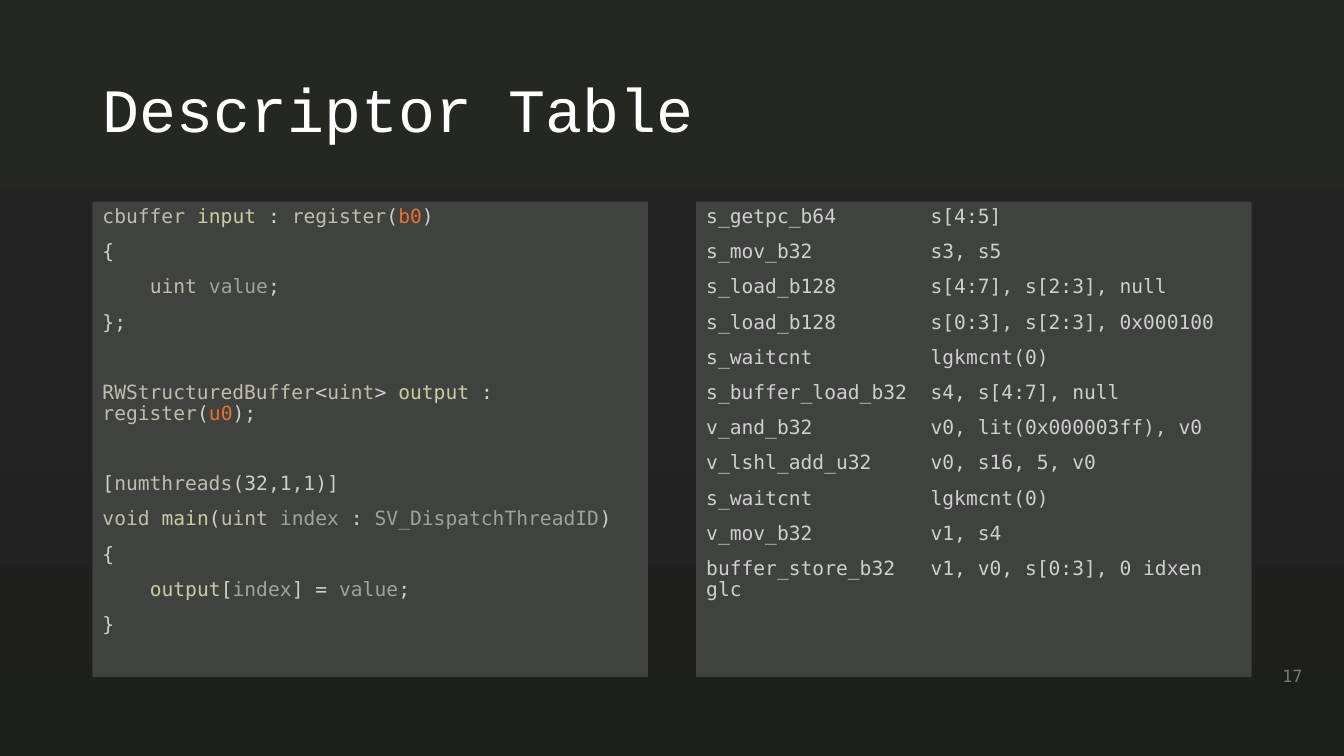
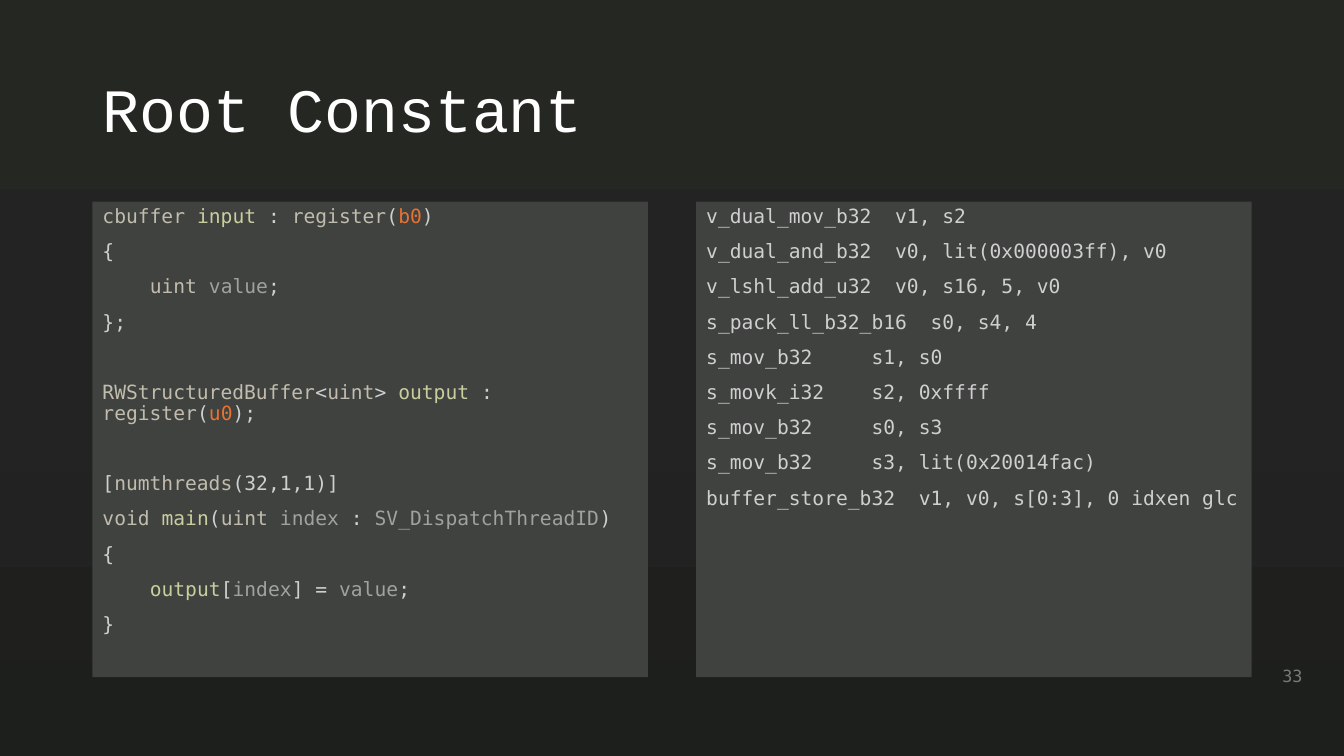
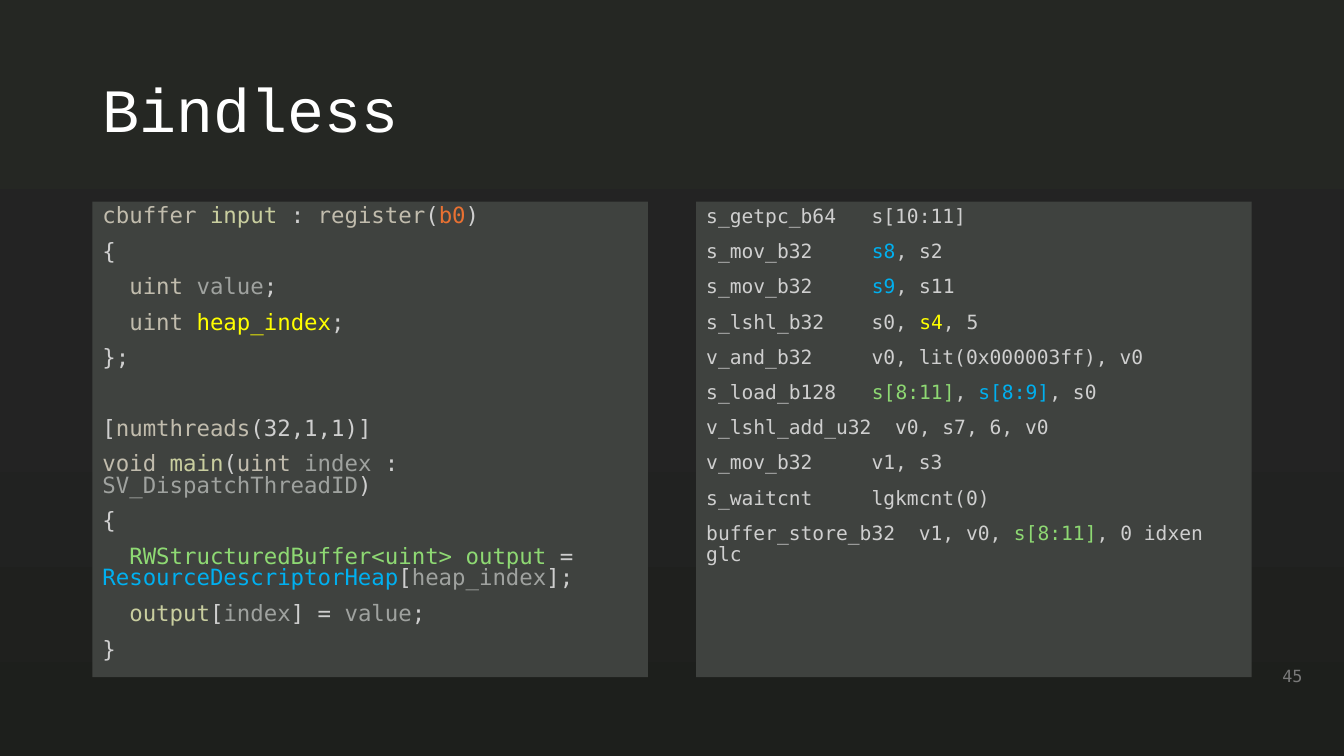
import copy
import itertools

import lxml.etree
import pptx
import pptx.dml.color
import pptx.enum.text
import pptx.oxml.ns
import pptx.util

RGBColor = pptx.dml.color.RGBColor

BACKDROP = (
    (0, RGBColor(0x25, 0x27, 0x23)),
    (0.5, RGBColor(0x23, 0x23, 0x23)),
    (1, RGBColor(0x1D, 0x1F, 0x1C)),
)
WHITE = RGBColor(0xFF, 0xFF, 0xFF)
PANEL = RGBColor(0x3F, 0x42, 0x3F)
PAGE_GREY = RGBColor(0x79, 0x79, 0x79)
PLAIN = RGBColor(0xCF, 0xCF, 0xCF)
KEYWORD = RGBColor(0xC1, 0xBC, 0xAD)
NAME = RGBColor(0xC9, 0xCE, 0x9F)
VARIABLE = RGBColor(0x9F, 0xA2, 0x9F)
ORANGE = RGBColor(0xE9, 0x71, 0x32)
YELLOW = RGBColor(0xFF, 0xFF, 0x00)
GREEN = RGBColor(0x8E, 0xD9, 0x73)
BLUE = RGBColor(0x00, 0xB0, 0xF0)

WORD_COLOURS = {
    **dict.fromkeys(("cbuffer", "register", "uint", "void", "numthreads", "RWStructuredBuffer"), KEYWORD),
    **dict.fromkeys(("input", "output", "main"), NAME),
    **dict.fromkeys(("value", "index", "heap_index", "SV_DispatchThreadID"), VARIABLE),
    **dict.fromkeys(("b0", "u0"), ORANGE),
}

TITLE_FONT = "Courier New"
CODE_FONT = "DejaVu Sans Mono"

PX = 9525
SLIDE_SIZE = (1280, 720)
TITLE_BOX = (88, 38, 1104, 139)
CODE_AREA = (88, 192, 1104, 453)
COLUMN_WIDTH = 529
PAGE_BOX = (962, 625, 288, 38)
LINE_GAP = 10
BLANK_LINE = 25

BOUND_SHADER = [
    "cbuffer input : register(b0)",
    "{",
    "    uint value;",
    "};",
    "",
    "RWStructuredBuffer<uint> output : register(u0);",
    "",
    "[numthreads(32,1,1)]",
    "void main(uint index : SV_DispatchThreadID)",
    "{",
    "    output[index] = value;",
    "}",
]
BINDLESS_SHADER = [
    "cbuffer input : register(b0)",
    "{",
    "  uint value;",
    ("  uint ", ("heap_index", YELLOW), ";"),
    "};",
    "",
    "[numthreads(32,1,1)]",
    "void main(uint index : SV_DispatchThreadID)",
    "{",
    ("  ", ("RWStructuredBuffer<uint> output", GREEN), " = ", ("ResourceDescriptorHeap", BLUE), "[heap_index];"),
    "  output[index] = value;",
    "}",
]
TABLE_ASSEMBLY = [
    "s_getpc_b64        s[4:5]",
    "s_mov_b32          s3, s5",
    "s_load_b128        s[4:7], s[2:3], null",
    "s_load_b128        s[0:3], s[2:3], 0x000100",
    "s_waitcnt          lgkmcnt(0)",
    "s_buffer_load_b32  s4, s[4:7], null",
    "v_and_b32          v0, lit(0x000003ff), v0",
    "v_lshl_add_u32     v0, s16, 5, v0",
    "s_waitcnt          lgkmcnt(0)",
    "v_mov_b32          v1, s4",
    "buffer_store_b32   v1, v0, s[0:3], 0 idxen glc",
]
CONSTANT_ASSEMBLY = [
    "v_dual_mov_b32  v1, s2",
    "v_dual_and_b32  v0, lit(0x000003ff), v0",
    "v_lshl_add_u32  v0, s16, 5, v0",
    "s_pack_ll_b32_b16  s0, s4, 4",
    "s_mov_b32     s1, s0",
    "s_movk_i32    s2, 0xffff",
    "s_mov_b32     s0, s3",
    "s_mov_b32     s3, lit(0x20014fac)",
    "buffer_store_b32  v1, v0, s[0:3], 0 idxen glc",
]
BINDLESS_ASSEMBLY = [
    "s_getpc_b64   s[10:11]",
    ("s_mov_b32     ", ("s8", BLUE), ", s2"),
    ("s_mov_b32     ", ("s9", BLUE), ", s11"),
    ("s_lshl_b32    s0, ", ("s4", YELLOW), ", 5"),
    "v_and_b32     v0, lit(0x000003ff), v0",
    ("s_load_b128   ", ("s[8:11]", GREEN), ", ", ("s[8:9]", BLUE), ", s0"),
    "v_lshl_add_u32  v0, s7, 6, v0",
    "v_mov_b32     v1, s3",
    "s_waitcnt     lgkmcnt(0)",
    ("buffer_store_b32  v1, v0, ", ("s[8:11]", GREEN), ", 0 idxen glc"),
]


def place(shape, box):
    shape.left, shape.top, shape.width, shape.height = (length * PX for length in box)


def style_run(run, font, size, colour):
    run.font.name = font
    run.font.size = pptx.util.Pt(size)
    run.font.color.rgb = colour


def paint_backdrop(master):
    fill = master.background.fill
    fill.gradient()
    fill.gradient_angle = 270
    stop_list = master.element.find(".//" + pptx.oxml.ns.qn("a:gsLst"))
    stop_list.insert(1, copy.deepcopy(stop_list[0]))
    for stop, (position, colour) in zip(fill.gradient_stops, BACKDROP):
        stop.position = position
        stop.color.rgb = colour


def is_word(character):
    return character.isalnum() or character == "_"


def split_words(line):
    for piece in (line,) if isinstance(line, str) else line:
        if isinstance(piece, tuple):
            yield piece
            continue
        for _, characters in itertools.groupby(piece, is_word):
            word = "".join(characters)
            yield word, WORD_COLOURS.get(word, PLAIN)


def remove_bullet(paragraph):
    properties = paragraph._p.get_or_add_pPr()
    properties.set("marL", "0")
    properties.set("indent", "0")
    lxml.etree.SubElement(properties, pptx.oxml.ns.qn("a:buNone"))


def fill_code(shape, box, lines, size, line_spacing):
    place(shape, box)
    shape.fill.solid()
    shape.fill.fore_color.rgb = PANEL
    frame = shape.text_frame
    frame.word_wrap = True
    frame.auto_size = pptx.enum.text.MSO_AUTO_SIZE.NONE
    frame.vertical_anchor = pptx.enum.text.MSO_ANCHOR.TOP
    paragraph = frame.paragraphs[0]
    space_before = 0
    for number, line in enumerate(lines):
        if not line:
            space_before += BLANK_LINE
            continue
        if number:
            paragraph = frame.add_paragraph()
        remove_bullet(paragraph)
        paragraph.line_spacing = line_spacing
        paragraph.space_before = pptx.util.Pt(space_before)
        space_before = LINE_GAP
        for colour, words in itertools.groupby(split_words(line), lambda word: word[1]):
            run = paragraph.add_run()
            run.text = "".join(text for text, _ in words)
            style_run(run, CODE_FONT, size, colour)


def fill_title(shape, box, text):
    place(shape, box)
    frame = shape.text_frame
    frame.text = text
    frame.word_wrap = True
    frame.auto_size = pptx.enum.text.MSO_AUTO_SIZE.NONE
    frame.vertical_anchor = pptx.enum.text.MSO_ANCHOR.MIDDLE
    paragraph = frame.paragraphs[0]
    paragraph.alignment = pptx.enum.text.PP_ALIGN.LEFT
    paragraph.line_spacing = 0.9
    style_run(paragraph.runs[0], TITLE_FONT, 44, WHITE)


def add_page_number(slide, box, number):
    shape = slide.shapes.add_textbox(0, 0, 0, 0)
    place(shape, box)
    frame = shape.text_frame
    frame.text = str(number)
    frame.word_wrap = True
    frame.vertical_anchor = pptx.enum.text.MSO_ANCHOR.MIDDLE
    paragraph = frame.paragraphs[0]
    paragraph.alignment = pptx.enum.text.PP_ALIGN.RIGHT
    style_run(paragraph.runs[0], CODE_FONT, 12, PAGE_GREY)


def add_comparison_slide(presentation, title, number, shader, assembly, shader_size=14, shader_spacing=0.9):
    slide = presentation.slides.add_slide(presentation.slide_layouts.get_by_name("Two Content"))
    title_shape, shader_shape, assembly_shape = slide.placeholders
    left, top, width, height = CODE_AREA
    right_column = left + width - COLUMN_WIDTH
    fill_title(title_shape, TITLE_BOX, title)
    fill_code(shader_shape, (left, top, COLUMN_WIDTH, height), shader, shader_size, shader_spacing)
    fill_code(assembly_shape, (right_column, top, COLUMN_WIDTH, height), assembly, 14, 0.9)
    add_page_number(slide, PAGE_BOX, number)


def main():
    presentation = pptx.Presentation()
    presentation.slide_width, presentation.slide_height = (length * PX for length in SLIDE_SIZE)
    paint_backdrop(presentation.slide_master)
    add_comparison_slide(presentation, "Descriptor Table", 17, BOUND_SHADER, TABLE_ASSEMBLY)
    add_comparison_slide(presentation, "Root Constant", 33, BOUND_SHADER, CONSTANT_ASSEMBLY)
    add_comparison_slide(presentation, "Bindless", 45, BINDLESS_SHADER, BINDLESS_ASSEMBLY, 16, 0.8)
    presentation.save("out.pptx")


if __name__ == "__main__":
    main()
